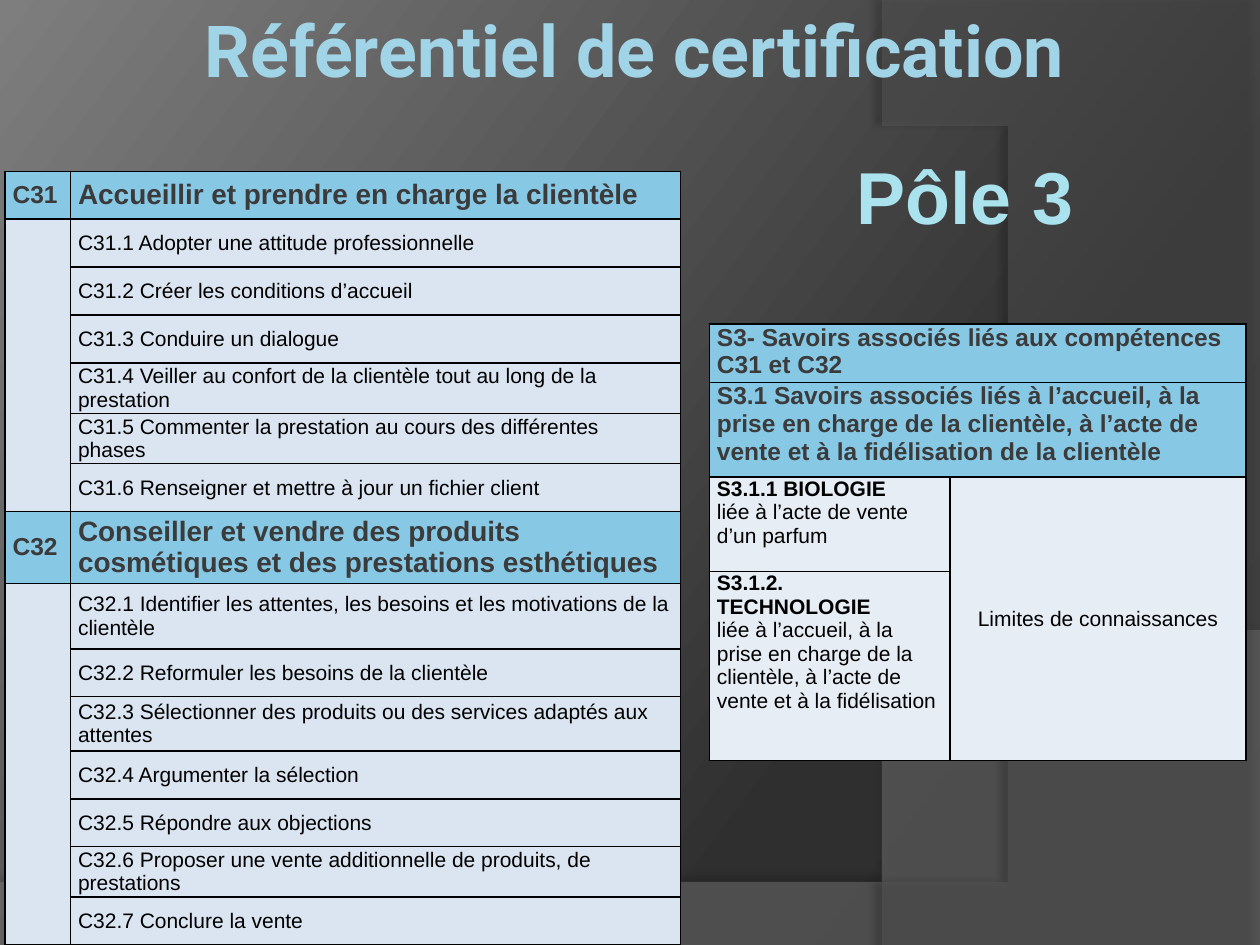
from copy import deepcopy
from dataclasses import dataclass

from lxml.etree import SubElement
from pptx import Presentation
from pptx.dml.color import RGBColor
from pptx.enum.text import MSO_ANCHOR, PP_ALIGN
from pptx.oxml.ns import qn
from pptx.util import Inches, Pt

COLORS = {
    "dark": "282828", "charcoal": "2F2F2F", "grey": "7E7E7E",
    "wave": "7F7F7F", "arc": "5E5E5E", "black": "000000",
    "heading": "87C8E5", "heading_text": "3B3B3B",
    "skill": "DBE5F1", "knowledge": "E7EDF5",
    "title": "A1D4E7", "pole": "AAE3EE",
}
BACKDROP = [("dark", 0), ("charcoal", 0.3), ("grey", 1)]


@dataclass
class Run:
    text: str
    size: float
    color: str = "black"
    bold: bool = False
    font: str = "Arial"


@dataclass
class Entry:
    row: int
    col: int
    fill: str
    paragraphs: list[list[Run]]
    rows: int = 1
    cols: int = 1
    anchor: MSO_ANCHOR = MSO_ANCHOR.TOP
    align: PP_ALIGN = PP_ALIGN.LEFT


@dataclass
class Swoosh:
    color: str
    opacity: int
    shadow_opacity: int
    shadow_distance: float
    shadow_angle: int
    start: tuple
    curve: tuple
    corners: list


@dataclass
class Skill:
    code: str
    title: str
    height: float
    items: list[str]
    heights: list[float]


SWOOSHES = [
    Swoosh("wave", 45, 35, 3.5, 270, (10, 5.2),
           ((5.59, 7.29), (3.91, 7.19), (0, 7.05)), [(0, 7.5), (10, 7.5)]),
    Swoosh("arc", 40, 45, 4, 180, (7.03, 7.5),
           ((8.91, 6.19), (9.47, 2.75), (6.68, 0)), [(10, 0.02), (10, 7.5)]),
]
SKILLS = [
    Skill("C31", "Accueillir et prendre en charge la clientèle", 0.38, [
        "Adopter une attitude professionnelle",
        "Créer les conditions d’accueil",
        "Conduire un dialogue",
        "Veiller au confort de la clientèle tout au long de la prestation",
        "Commenter la prestation au cours des différentes phases",
        "Renseigner et mettre à jour un fichier client",
    ], [0.38] * 6),
    Skill("C32", "Conseiller et vendre des produits cosmétiques et des prestations esthétiques", 0.57, [
        "Identifier les attentes, les besoins et les motivations de la clientèle",
        "Reformuler les besoins de la clientèle",
        "Sélectionner des produits ou des services adaptés aux attentes",
        "Argumenter la sélection",
        "Répondre aux objections",
        "Proposer une vente additionnelle de produits, de prestations",
        "Conclure la vente",
    ], [0.52, 0.38, 0.43] + [0.38] * 4),
]
HEADINGS = [
    "S3- Savoirs associés liés aux compétences C31 et C32",
    "S3.1 Savoirs associés liés à l’accueil, à la prise en charge de la clientèle, "
    "à l’acte de vente et à la fidélisation de la clientèle",
]
TOPICS = [
    ("S3.1.1 BIOLOGIE", "liée à l’acte de vente d’un parfum"),
    ("S3.1.2. TECHNOLOGIE", "liée à l’accueil, à la prise en charge de la clientèle, "
     "à l’acte de vente et à la fidélisation"),
]


def rgb(name: str) -> RGBColor:
    """Look up a colour by its role."""
    return RGBColor.from_string(COLORS[name])


def paint_background(slide) -> None:
    """Fill the slide with the diagonal grey gradient."""
    fill = slide.background.fill
    fill.gradient()
    fill.gradient_angle = 143
    stop_list = slide.element.find(".//" + qn("a:gsLst"))
    stop_list.append(deepcopy(stop_list[-1]))
    for stop, (color, position) in zip(fill.gradient_stops, BACKDROP):
        stop.color.rgb = rgb(color)
        stop.position = position


def bezier(start: tuple, curve: tuple, steps: int = 60) -> list[tuple]:
    """Return points along a cubic curve."""
    points = (start, *curve)
    result = []
    for step in range(1, steps + 1):
        t = step / steps
        weights = ((1 - t) ** 3, 3 * t * (1 - t) ** 2, 3 * t * t * (1 - t), t ** 3)
        result.append(tuple(sum(w * p[axis] for w, p in zip(weights, points)) for axis in (0, 1)))
    return result


def draw_swoosh(slide, swoosh: Swoosh) -> None:
    """Draw a translucent curved area with its soft shadow."""
    builder = slide.shapes.build_freeform(*swoosh.start, scale=Inches(1))
    builder.add_line_segments(bezier(swoosh.start, swoosh.curve) + swoosh.corners, close=True)
    area = builder.convert_to_shape()
    area.fill.solid()
    area.fill.fore_color.rgb = rgb(swoosh.color)
    area.line.fill.background()
    area.shadow.inherit = False
    properties = area.element.spPr
    tint = properties.find(qn("a:solidFill"))[0]
    SubElement(tint, qn("a:alpha"), val=str(swoosh.opacity * 1000))
    shadow = SubElement(properties.find(qn("a:effectLst")), qn("a:outerShdw"),
                        blurRad=str(Pt(4)), dist=str(Pt(swoosh.shadow_distance)),
                        dir=str(swoosh.shadow_angle * 60000), rotWithShape="0")
    shade = SubElement(shadow, qn("a:srgbClr"), val=COLORS["black"])
    SubElement(shade, qn("a:alpha"), val=str(swoosh.shadow_opacity * 1000))


def write(frame, paragraphs: list[list[Run]], align: PP_ALIGN) -> None:
    """Write styled runs into a text frame."""
    for index, runs in enumerate(paragraphs):
        paragraph = frame.add_paragraph() if index else frame.paragraphs[0]
        paragraph.alignment = align
        for part in runs:
            run = paragraph.add_run()
            run.text = part.text
            run.font.size = Pt(part.size)
            run.font.name = part.font
            run.font.bold = part.bold
            run.font.color.rgb = rgb(part.color)


def add_title(slide, box: tuple, run: Run, anchor: MSO_ANCHOR, align: PP_ALIGN) -> None:
    """Place a one-line title."""
    frame = slide.shapes.add_textbox(*map(Inches, box)).text_frame
    frame.word_wrap = True
    frame.vertical_anchor = anchor
    frame.margin_left = frame.margin_right = Inches(0.05)
    frame.margin_top = frame.margin_bottom = 0
    write(frame, [[run]], align)


def style_cell(cell, fill: str) -> None:
    """Set the borders, margins and fill of a cell."""
    properties = cell._tc.get_or_add_tcPr()
    for side in ("a:lnL", "a:lnR", "a:lnT", "a:lnB"):
        border = SubElement(properties, qn(side), w=str(Pt(1)))
        SubElement(SubElement(border, qn("a:solidFill")), qn("a:srgbClr"), val=COLORS["black"])
    cell.margin_left = cell.margin_right = Inches(0.06)
    cell.margin_top = cell.margin_bottom = 0
    cell.fill.solid()
    cell.fill.fore_color.rgb = rgb(fill)


def add_grid(slide, left: float, top: float, widths: list[float],
             heights: list[float], entries: list[Entry]) -> None:
    """Build a bordered table from its entries."""
    table = slide.shapes.add_table(len(heights), len(widths), Inches(left), Inches(top),
                                   Inches(sum(widths)), Inches(sum(heights))).table
    table.first_row = table.horz_banding = False
    for column, width in zip(table.columns, widths):
        column.width = Inches(width)
    for row, height in zip(table.rows, heights):
        row.height = Inches(height)
    for entry in entries:
        for row in range(entry.row, entry.row + entry.rows):
            for col in range(entry.col, entry.col + entry.cols):
                style_cell(table.cell(row, col), entry.fill)
        cell = table.cell(entry.row, entry.col)
        if entry.rows * entry.cols > 1:
            cell.merge(table.cell(entry.row + entry.rows - 1, entry.col + entry.cols - 1))
        cell.vertical_anchor = entry.anchor
        write(cell.text_frame, entry.paragraphs, entry.align)


def add_skills(slide) -> None:
    """Build the table of skills."""
    entries, heights = [], []
    middle = MSO_ANCHOR.MIDDLE
    for skill in SKILLS:
        for col, (text, size) in enumerate([(skill.code, 14), (skill.title, 16)]):
            entries.append(Entry(len(heights), col, "heading",
                                 [[Run(text, size, "heading_text", True)]], anchor=middle))
        heights.append(skill.height)
        entries.append(Entry(len(heights), 0, "skill", [], rows=len(skill.items)))
        for number, item in enumerate(skill.items, 1):
            entries.append(Entry(len(heights) + number - 1, 1, "skill",
                                 [[Run(f"{skill.code}.{number} {item}", 12)]], anchor=middle))
        heights += skill.heights
    add_grid(slide, 0.04, 1.36, [0.52, 4.84], heights, entries)


def add_knowledge(slide) -> None:
    """Build the table of associated knowledge."""
    entries = [Entry(row, 0, "heading", [[Run(text, 14, "heading_text", True)]], cols=2)
               for row, text in enumerate(HEADINGS)]
    entries += [Entry(row, 0, "knowledge", [[Run(topic, 12, bold=True)], [Run(detail, 12)]])
                for row, (topic, detail) in enumerate(TOPICS, len(HEADINGS))]
    entries.append(Entry(2, 1, "knowledge", [[Run("Limites de connaissances", 12)]], rows=2,
                         anchor=MSO_ANCHOR.MIDDLE, align=PP_ALIGN.CENTER))
    add_grid(slide, 5.63, 2.57, [1.91, 2.35], [0.44, 0.75, 0.75, 1.5], entries)


def main() -> None:
    """Build and save the slide."""
    deck = Presentation()
    deck.slide_width, deck.slide_height = Inches(10), Inches(7.5)
    slide = deck.slides.add_slide(deck.slide_layouts[6])
    paint_background(slide)
    for swoosh in SWOOSHES:
        draw_swoosh(slide, swoosh)
    add_title(slide, (6.75, 1.15, 3.2, 0.8), Run("Pôle 3", 42, "pole", True),
              MSO_ANCHOR.MIDDLE, PP_ALIGN.LEFT)
    add_title(slide, (0.59, 0.05, 8.9, 1.1),
              Run("Référentiel de certification", 41, "title", True, "Roboto"),
              MSO_ANCHOR.TOP, PP_ALIGN.CENTER)
    add_skills(slide)
    add_knowledge(slide)
    deck.save("out.pptx")


if __name__ == "__main__":
    main()
